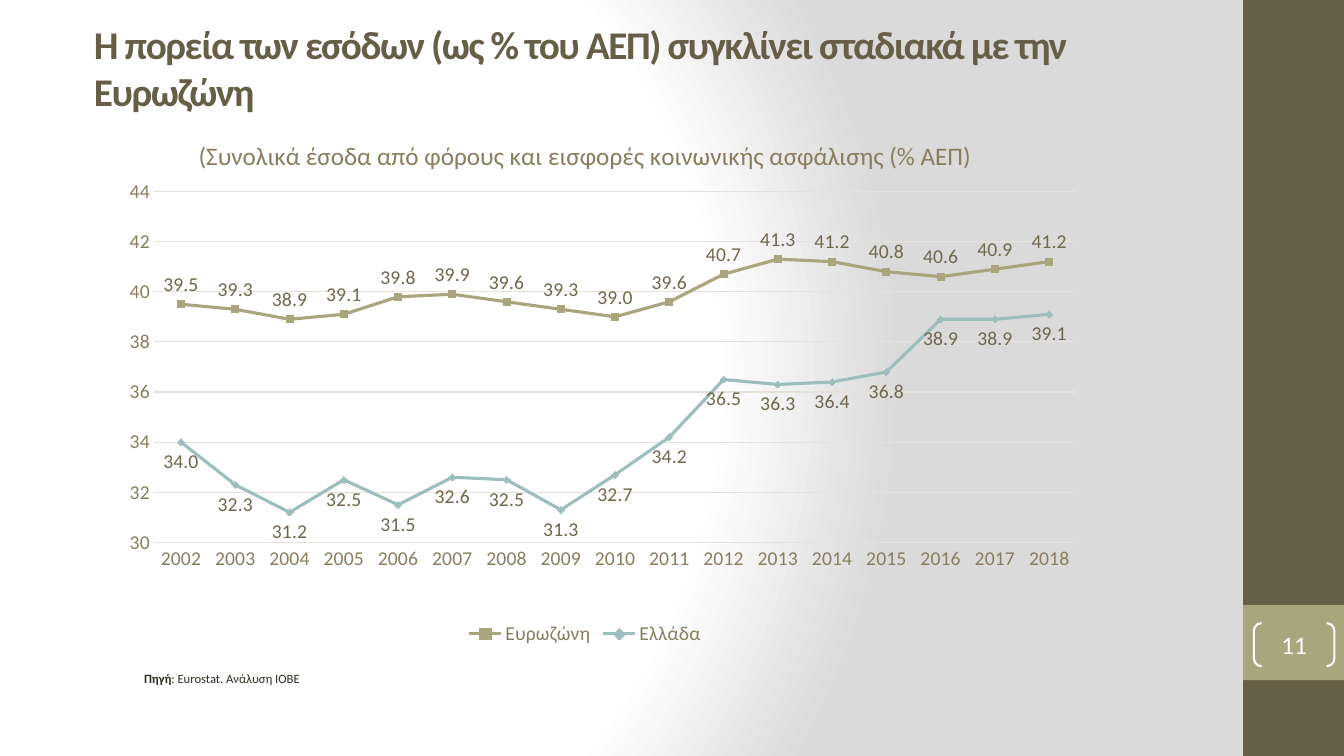
from pptx import Presentation
from pptx.chart.data import CategoryChartData
from pptx.dml.color import RGBColor
from pptx.enum.chart import XL_CHART_TYPE, XL_LABEL_POSITION, XL_LEGEND_POSITION, XL_TICK_MARK
from pptx.enum.shapes import MSO_SHAPE
from pptx.enum.text import MSO_ANCHOR, MSO_AUTO_SIZE, PP_ALIGN
from pptx.oxml import parse_xml
from pptx.oxml.ns import nsdecls
from pptx.util import Cm, Pt

LINE_CHART = XL_CHART_TYPE.LINE
ABOVE, BELOW = XL_LABEL_POSITION.ABOVE, XL_LABEL_POSITION.BELOW
LEGEND_BOTTOM = XL_LEGEND_POSITION.BOTTOM
NO_TICK = XL_TICK_MARK.NONE
RECTANGLE, BRACKETS = MSO_SHAPE.RECTANGLE, MSO_SHAPE.DOUBLE_BRACKET
MIDDLE = MSO_ANCHOR.MIDDLE
NO_AUTOFIT = MSO_AUTO_SIZE.NONE
LEFT, CENTER = PP_ALIGN.LEFT, PP_ALIGN.CENTER

FONT = "Calibri"
BROWN, KHAKI, TEAL = "675E47", "A9A57C", "9CBEBD"
WHITE, INK, AXIS_TEXT, LABEL_TEXT, GRID = "FFFFFF", "2F2B20", "897D5D", "6F664C", "E5E2D9"

YEARS = [str(year) for year in range(2002, 2019)]
SERIES = [
    ("Ευρωζώνη", KHAKI, ABOVE,
     [39.5, 39.3, 38.9, 39.1, 39.8, 39.9, 39.6, 39.3, 39.0, 39.6, 40.7, 41.3, 41.2, 40.8,
      40.6, 40.9, 41.2]),
    ("Ελλάδα", TEAL, BELOW,
     [34.0, 32.3, 31.2, 32.5, 31.5, 32.6, 32.5, 31.3, 32.7, 34.2, 36.5, 36.3, 36.4, 36.8,
      38.9, 38.9, 39.1]),
]


def rgb(color):
    return RGBColor.from_string(color)


def set_font(font, size, color, bold=False):
    font.name, font.size, font.bold = FONT, Pt(size), bold
    font.color.rgb = rgb(color)


def set_line(line, color, width):
    line.color.rgb = rgb(color)
    line.width = Pt(width)


def add_span(para, text, size, color, bold=False, spacing=None):
    span = para.add_run()
    span.text = text
    set_font(span.font, size, color, bold)
    if spacing is not None:
        span.font._element.set("spc", str(spacing))


def set_background(page):
    """Give the page a circular gradient from white to grey."""
    page.background.fill.solid()
    solid = page.element.xpath("p:cSld/p:bg/p:bgPr/a:solidFill")[0]
    stops = "".join(
        f'<a:gs pos="{percent * 1000}"><a:srgbClr val="{color}"/></a:gs>'
        for percent, color in [(0, WHITE), (75, WHITE), (100, "DADADA")])
    gradient = parse_xml(
        f'<a:gradFill {nsdecls("a")} rotWithShape="1"><a:gsLst>{stops}</a:gsLst>'
        '<a:path path="circle"><a:fillToRect l="20000" t="50000" r="100000" b="50000"/>'
        '</a:path></a:gradFill>')
    solid.getparent().replace(solid, gradient)


def add_block(page, top, height, color):
    block = page.shapes.add_shape(RECTANGLE, Cm(31.33), Cm(top), Cm(2.54), Cm(height))
    block.shadow.inherit = False
    block.fill.solid()
    block.fill.fore_color.rgb = rgb(color)
    block.line.fill.background()


def add_page_number(page, number):
    box = page.shapes.add_shape(BRACKETS, Cm(31.6), Cm(15.7), Cm(2.03), Cm(1.09))
    box.adjustments[0] = 0.18
    box.shadow.inherit = False
    box.fill.background()
    set_line(box.line, WHITE, 1.5)
    frame = box.text_frame
    frame.margin_left = frame.margin_right = frame.margin_top = frame.margin_bottom = 0
    frame.vertical_anchor = MIDDLE
    para = frame.paragraphs[0]
    para.alignment = CENTER
    add_span(para, number, 18, WHITE)


def set_title(page, text):
    title = page.shapes.title
    title.left, title.top, title.width, title.height = Cm(2.11), Cm(0.43), Cm(27.53), Cm(2.54)
    frame = title.text_frame
    frame.auto_size = NO_AUTOFIT
    frame.vertical_anchor = MIDDLE
    para = frame.paragraphs[0]
    para.alignment = LEFT
    add_span(para, text, 28, BROWN, bold=True, spacing=-100)


def add_source(page):
    box = page.shapes.add_textbox(Cm(3.38), Cm(16.79), Cm(10.21), Cm(0.64))
    box.text_frame.word_wrap = True
    para = box.text_frame.paragraphs[0]
    add_span(para, "Πηγή", 9, INK, bold=True)
    add_span(para, ": Eurostat. Ανάλυση ΙΟΒΕ", 9, INK)


def manual_layout(target="", **fractions):
    """Build a chart layout from fractions of the chart's size."""
    modes = '<c:xMode val="edge"/><c:yMode val="edge"/>'
    sizes = "".join(f'<c:{key} val="{value}"/>' for key, value in fractions.items())
    return parse_xml(f'<c:layout {nsdecls("c")}><c:manualLayout>{target}{modes}{sizes}'
                     '</c:manualLayout></c:layout>')


def format_axis(axis):
    axis.major_tick_mark = axis.minor_tick_mark = NO_TICK
    set_font(axis.tick_labels.font, 14, AXIS_TEXT)


def format_series(series, color, position):
    series.smooth = False
    series.marker.style = None
    set_line(series.format.line, color, 2.25)
    labels = series.data_labels
    labels.show_value = True
    labels.position = position
    labels.number_format, labels.number_format_is_linked = "#,##0.0", False
    set_font(labels.font, 14, LABEL_TEXT)


def add_revenue_chart(page, title):
    data = CategoryChartData()
    data.categories = YEARS
    for name, _, _, values in SERIES:
        data.add_series(name, values)
    chart = page.shapes.add_chart(
        LINE_CHART, Cm(2.11), Cm(2.84), Cm(25.27), Cm(13.54), data).chart
    set_font(chart.font, 14, INK)

    chart.has_title = True
    add_span(chart.chart_title.text_frame.paragraphs[0], title, 18, AXIS_TEXT)
    heading = chart.chart_title._element
    for layout in heading.xpath("c:layout"):
        heading.remove(layout)
    heading.xpath("c:tx")[0].addnext(manual_layout(x=0.11, y=0.04))
    chart.chart_title.include_in_layout = False

    plot_area = chart._chartSpace.xpath("c:chart/c:plotArea")[0]
    for layout in plot_area.xpath("c:layout"):
        plot_area.remove(layout)
    plot_area.insert(0, manual_layout('<c:layoutTarget val="inner"/>',
                                      x=0.07, y=0.1, w=0.92, h=0.7))

    format_axis(chart.category_axis)
    set_line(chart.category_axis.format.line, GRID, 0.75)
    scale = chart.value_axis
    format_axis(scale)
    scale.format.line.fill.background()
    scale.minimum_scale, scale.maximum_scale, scale.major_unit = 30, 45, 2
    scale.tick_labels.number_format = "#,##0"
    scale.tick_labels.number_format_is_linked = False
    set_line(scale.major_gridlines.format.line, GRID, 0.75)

    chart.has_legend = True
    chart.legend.position = LEGEND_BOTTOM
    chart.legend.include_in_layout = False
    set_font(chart.legend.font, 14, AXIS_TEXT)
    for series, (_, color, position, _) in zip(chart.plots[0].series, SERIES):
        format_series(series, color, position)


def main():
    deck = Presentation()
    deck.slide_width, deck.slide_height = Cm(33.87), Cm(19.05)
    page = deck.slides.add_slide(deck.slide_layouts[5])
    set_background(page)
    add_block(page, 0, 19.05, BROWN)
    add_block(page, 15.24, 1.9, KHAKI)
    set_title(page, "Η πορεία των εσόδων (ως % του ΑΕΠ) συγκλίνει σταδιακά με την Ευρωζώνη")
    add_page_number(page, "11")
    add_source(page)
    add_revenue_chart(page, "(Συνολικά έσοδα από φόρους και εισφορές κοινωνικής ασφάλισης (% ΑΕΠ)")
    deck.save("out.pptx")


if __name__ == "__main__":
    main()
